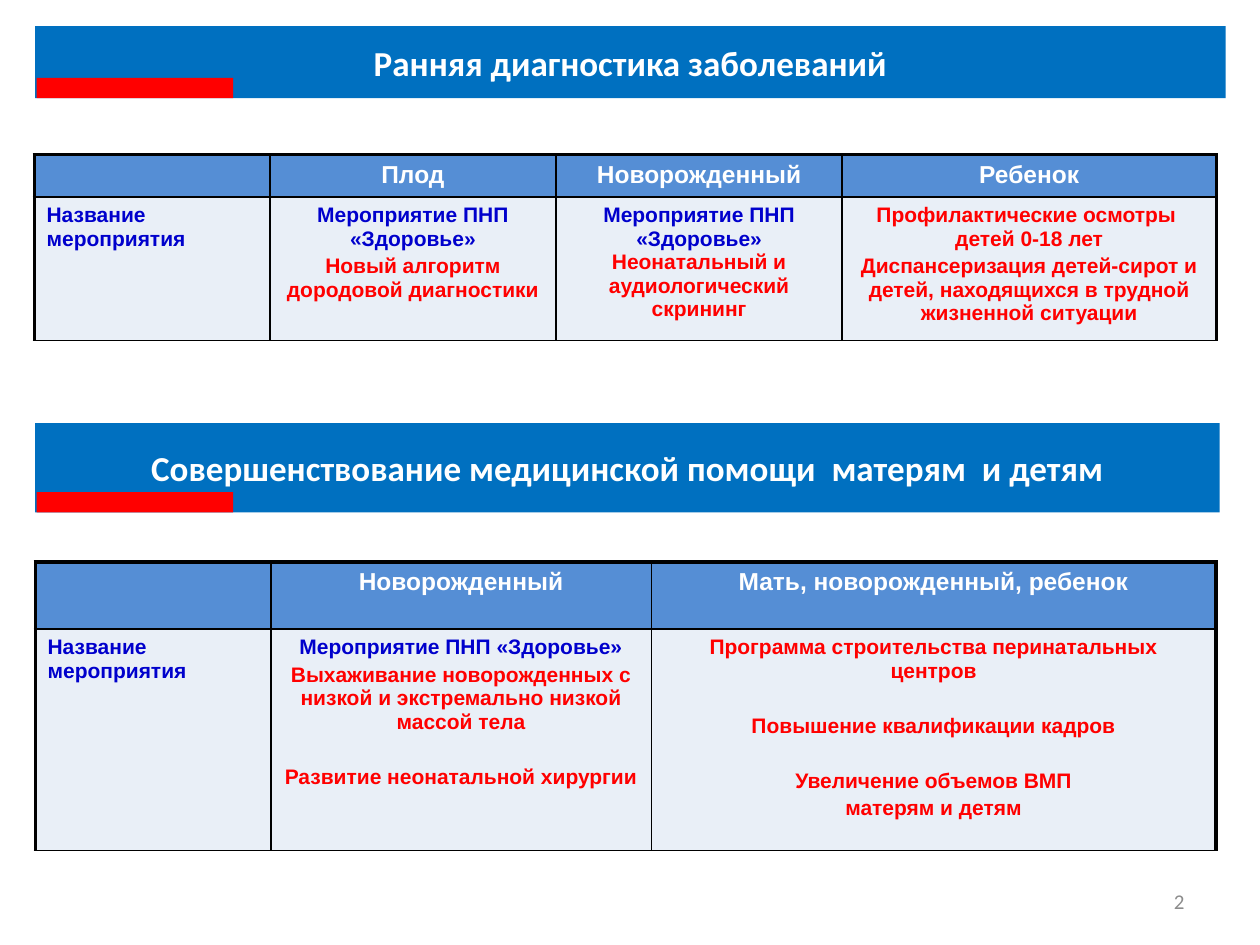
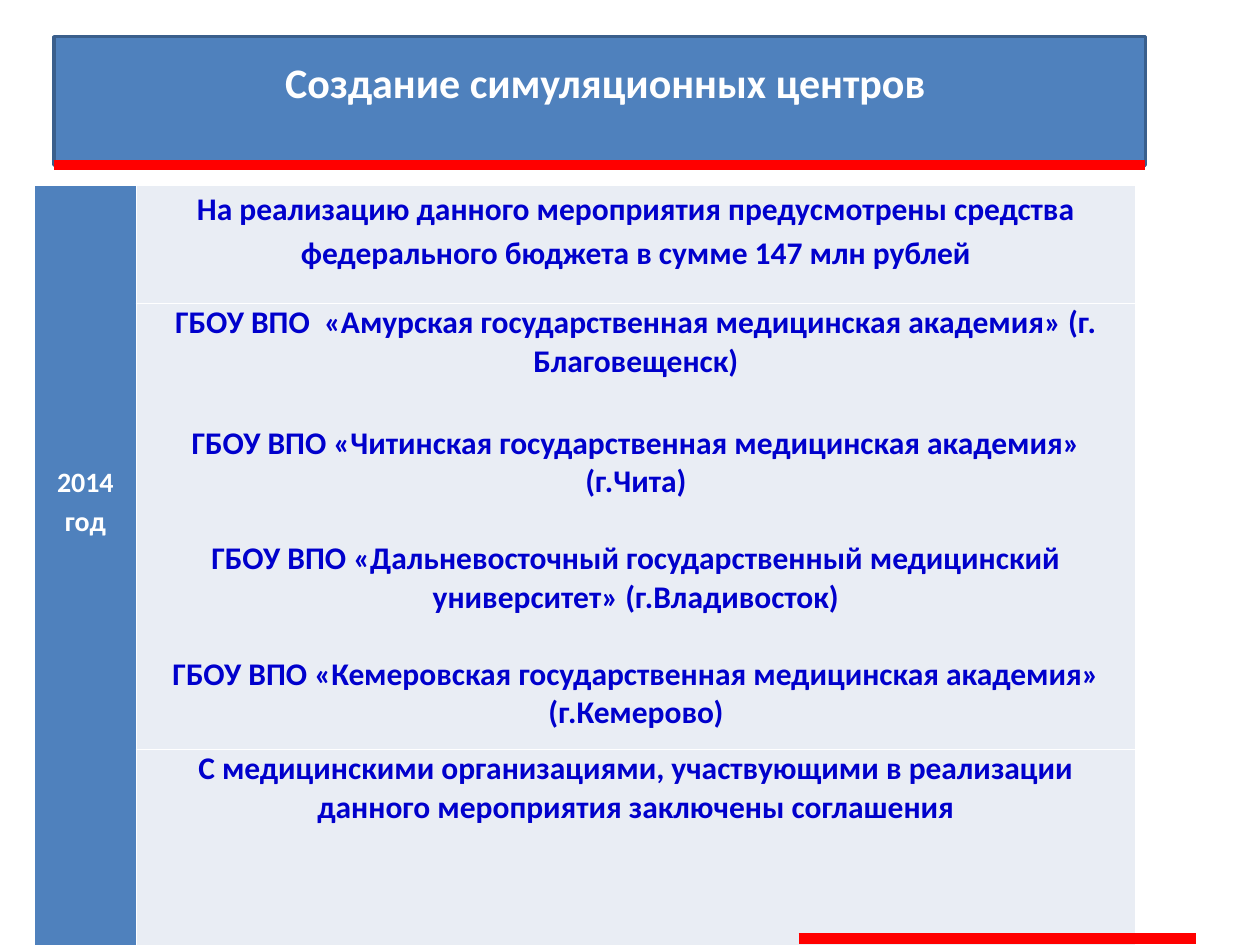
from lxml import etree
from pptx import Presentation
from pptx import util as u
from pptx.dml.color import RGBColor
from pptx.enum import shapes, text
from pptx.oxml.ns import qn

Cm, Pt = u.Cm, u.Pt
ALIGN, ANCHOR = text.PP_ALIGN, text.MSO_ANCHOR
COLOURS = {
    "band": "0070C0", "accent": "FF0000", "header": "558ED5", "body": "E9EFF7",
    "panel": "4F81BD", "edge": "3A5F8C", "row": "E9EDF4", "ink": "0000CC",
    "white": "FFFFFF", "black": "000000", "grey": "8C8C8C",
}
HEAD = {"name": "Arial", "size": Pt(14), "bold": True}
BODY = {"name": "Arial", "size": Pt(12), "bold": True}
TITLE = {"name": "Calibri", "size": Pt(20), "bold": True}
BIG_TITLE = {**TITLE, "size": Pt(24)}
LIST = {**TITLE, "size": Pt(18)}
YEAR = {**TITLE, "size": Pt(16)}
NUMBER = {"name": "Calibri", "size": Pt(12), "bold": False}
NEXT, APART = 2.4, 18


class Deck:
    """Holds the style and the current slide and draws each kind of element."""

    def __init__(self):
        self.prs = Presentation()
        self.prs.slide_width, self.prs.slide_height = Cm(25.4), Cm(19.05)
        self.s = None

    def new_slide(self):
        self.s = self.prs.slides.add_slide(self.prs.slide_layouts[6])

    def rgb(self, name):
        return RGBColor.from_string(COLOURS[name])

    def put_text(self, tf, paras, font, align=ALIGN.CENTER, spacing=None):
        tf.word_wrap = True
        for i, (gap, *runs) in enumerate(paras):
            p = tf.add_paragraph() if i else tf.paragraphs[0]
            layout = {"alignment": align, "space_before": Pt(gap), "line_spacing": spacing}
            for key, value in layout.items():
                setattr(p, key, value)
            for words, colour in runs:
                r = p.add_run()
                r.text = words
                for key, value in font.items():
                    setattr(r.font, key, value)
                r.font.color.rgb = self.rgb(colour)

    def label(self, x, y, w, h, words, font, colour, align=ALIGN.CENTER, anchor=ANCHOR.TOP):
        tf = self.s.shapes.add_textbox(Cm(x), Cm(y), Cm(w), Cm(h)).text_frame
        tf.vertical_anchor = anchor
        self.put_text(tf, [(0, (words, colour))], font, align)

    def rect(self, x, y, w, h, fill, edge=None):
        sp = self.s.shapes.add_shape(shapes.MSO_SHAPE.RECTANGLE, Cm(x), Cm(y), Cm(w), Cm(h))
        sp.shadow.inherit = False
        sp.fill.solid()
        sp.fill.fore_color.rgb = self.rgb(fill)
        if edge:
            sp.line.color.rgb = self.rgb(edge)
            sp.line.width = Pt(2)
        else:
            sp.line.fill.background()
        return sp

    def band(self, y, w, h, words):
        sp = self.rect(0.71, y, w, h, "band")
        sp.text_frame.vertical_anchor = ANCHOR.MIDDLE
        self.put_text(sp.text_frame, [(0, (words, "white"))], TITLE)
        self.rect(0.74, y + h - 0.41, 3.96, 0.41, "accent")

    def rule(self, x, y, w):
        c = self.s.shapes.add_connector(
            shapes.MSO_CONNECTOR.STRAIGHT, Cm(x), Cm(y), Cm(x + w), Cm(y))
        c.line.color.rgb = self.rgb("accent")
        c.line.width = Pt(6)
        etree.SubElement(c._element.spPr, qn("a:effectLst"))

    def grid(self, x, y, cols, rows):
        frame = self.s.shapes.add_table(
            len(rows), len(cols), Cm(x), Cm(y), Cm(sum(cols)), Cm(sum(rows)))
        tbl = frame.table
        tbl.first_row = tbl.horz_banding = False
        for col, w in zip(tbl.columns, cols):
            col.width = Cm(w)
        for row, h in zip(tbl.rows, rows):
            row.height = Cm(h)
        return tbl

    def cell(self, cell, fill, insets, borders, colour):
        cell.fill.solid()
        cell.fill.fore_color.rgb = self.rgb(fill)
        for side, value in zip(("left", "top", "right", "bottom"), insets):
            setattr(cell, f"margin_{side}", Cm(value))
        tc_pr = cell._tc.get_or_add_tcPr()
        for i, (side, width) in enumerate(zip("LRTB", borders)):
            ln = etree.Element(qn(f"a:ln{side}"), w=str(Pt(width)))
            solid = etree.SubElement(ln, qn("a:solidFill"))
            etree.SubElement(solid, qn("a:srgbClr"), val=COLOURS[colour])
            tc_pr.insert(i, ln)

    def measures(self, x, y, cols, rows, heads, bodies):
        tbl = self.grid(x, y, cols, rows)
        last = len(cols) - 1
        for j in range(len(cols)):
            sides = (2.25 if j == 0 else 1, 2.25 if j == last else 1)
            for i, fill in enumerate(("header", "body")):
                borders = (*sides, 1 if i else 2.25, 1)
                self.cell(tbl.cell(i, j), fill, (0.25, 0.13, 0.25, 0.13), borders, "black")
        corner = tbl.cell(0, 0).text_frame.paragraphs[0]
        etree.SubElement(corner._p, qn("a:endParaRPr"), sz="1400")
        self.put_text(tbl.cell(1, 0).text_frame, [(0, ("Название мероприятия", "ink"))],
                      BODY, ALIGN.LEFT)
        for j, (head, paras) in enumerate(zip(heads, bodies), 1):
            self.put_text(tbl.cell(0, j).text_frame, [(0, (head, "white"))], HEAD)
            self.put_text(tbl.cell(1, j).text_frame, paras, BODY)

    def centres(self, x, y, cols, rows, year, contents):
        tbl = self.grid(x, y, cols, rows)
        for i in range(len(rows)):
            for j, fill in enumerate(("panel", "row")):
                top = 5.55 if i == j == 0 else 0
                self.cell(tbl.cell(i, j), fill, (0.18, top, 0.18, 0), (1,) * 4, "white")
        tbl.cell(0, 0).merge(tbl.cell(len(rows) - 1, 0))
        self.put_text(tbl.cell(0, 0).text_frame, [(0, (year, "white"))], YEAR, spacing=1.15)
        for i, (spacing, paras) in enumerate(contents):
            inked = [(gap, (words, "ink")) for gap, words in paras]
            self.put_text(tbl.cell(i, 1).text_frame, inked, LIST, spacing=spacing)


def diagnostics(d):
    """Draws the slide on early diagnosis and care for mothers and children."""
    project = ("Мероприятие ПНП «Здоровье»", "ink")
    d.new_slide()
    d.label(18.21, 17.65, 5.92, 1.02, "2", NUMBER, "grey", ALIGN.RIGHT, ANCHOR.MIDDLE)
    d.band(0.53, 24, 1.45, "Ранняя диагностика заболеваний")
    d.measures(0.69, 3.12, (4.75, 5.77, 5.77, 7.54), (0.81, 2.79),
               ("Плод", "Новорожденный", "Ребенок"), (
        [(0, project), (NEXT, ("Новый алгоритм дородовой диагностики", "accent"))],
        [(0, project, (" Неонатальный и аудиологический скрининг", "accent"))],
        [(0, ("Профилактические осмотры  детей 0-18 лет", "accent")),
         (NEXT, ("Диспансеризация детей-сирот и детей, находящихся в трудной "
                 "жизненной ситуации", "accent"))]))
    d.band(8.53, 23.88, 1.8, "Совершенствование медицинской помощи  матерям  и детям")
    d.measures(0.71, 11.33, (4.75, 7.67, 11.38), (1.35, 4.47),
               ("Новорожденный", "Мать, новорожденный, ребенок"), (
        [(0, project),
         (NEXT, ("Выхаживание новорожденных с низкой и экстремально низкой "
                 "массой тела", "accent")),
         (APART, ("Развитие неонатальной хирургии", "accent"))],
        [(0, ("Программа строительства перинатальных центров", "accent")),
         (APART, ("Повышение квалификации кадров", "accent")),
         (APART, ("Увеличение объемов ВМП", "accent")),
         (NEXT, ("матерям и детям", "accent"))]))


def simulation(d):
    """Draws the slide on simulation centres."""
    d.new_slide()
    d.rect(1.09, 0.74, 22, 2.59, "panel", "edge")
    d.label(1.5, 1.02, 21.41, 1.27, "Создание симуляционных центров", BIG_TITLE, "white")
    d.centres(0.69, 3.73, (2.06, 20.14), (2.39, 8.99, 3.94), "2014 год", (
        (1.15, [(0, "На реализацию данного мероприятия предусмотрены средства "
                    "федерального бюджета в сумме 147 млн рублей")]),
        (None, [
            (0, "ГБОУ ВПО  «Амурская государственная медицинская академия» (г. Благовещенск)"),
            (25, "ГБОУ ВПО «Читинская государственная медицинская академия» (г.Чита)"),
            (22, "ГБОУ ВПО «Дальневосточный государственный медицинский "
                 "университет» (г.Владивосток)"),
            (22, "ГБОУ ВПО «Кемеровская государственная медицинская академия» (г.Кемерово)")]),
        (None, [(0, "С медицинскими организациями, участвующими в реализации "
                    "данного мероприятия заключены соглашения")])))
    d.rule(1.09, 3.33, 22)
    d.rule(16.1, 18.92, 8)


def main():
    """Builds the deck and saves it."""
    d = Deck()
    diagnostics(d)
    simulation(d)
    d.prs.save("out.pptx")


if __name__ == "__main__":
    main()
